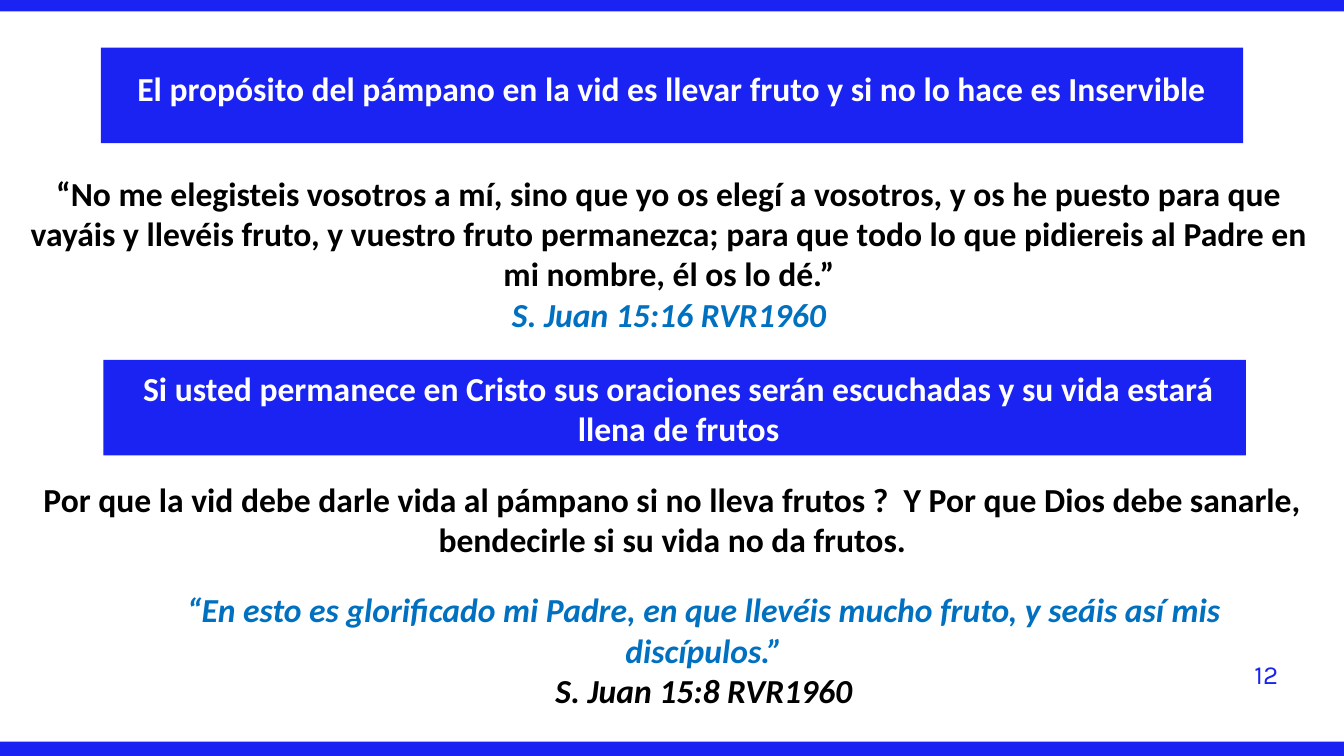
from dataclasses import dataclass

from pptx import Presentation
from pptx.dml.color import RGBColor
from pptx.enum.shapes import MSO_SHAPE
from pptx.enum.text import PP_ALIGN
from pptx.util import Cm, Pt

RECT = MSO_SHAPE.RECTANGLE
CENTER = PP_ALIGN.CENTER


@dataclass(frozen=True)
class Theme:
    blue: str = "1A23F1"
    sky: str = "0070C0"
    white: str = "FFFFFF"
    black: str = "000000"
    body: str = "Calibri"
    digit: str = "Karla"
    size: int = 36
    small: int = 28
    lead: float = 39.2


THEME = Theme()


def add_rect(shapes, box, color):
    rect = shapes.add_shape(RECT, *map(Cm, box))
    rect.shadow.inherit = False
    rect.fill.solid()
    rect.fill.fore_color.rgb = RGBColor.from_string(color)
    rect.line.fill.background()


def add_text(shapes, box, lines):
    frame = shapes.add_textbox(*map(Cm, box)).text_frame
    frame.word_wrap = True
    frame.text = "\n".join(text for text, _, _ in lines)
    for para, (_, color, slant) in zip(frame.paragraphs, lines):
        para.alignment = CENTER
        font = para.runs[0].font
        font.name = THEME.body
        font.size = Pt(THEME.size)
        font.bold = True
        font.italic = slant
        font.color.rgb = RGBColor.from_string(color)
    return frame


def add_banner(shapes, box, text, inset):
    left, top, width, height = box
    dx, dy, wide = inset
    add_rect(shapes, box, THEME.blue)
    add_text(shapes, (left + dx, top + dy, wide, height - 0.28),
             [(text, THEME.white, False)])


def add_badge(shapes, box, number):
    left, top, width, height = box
    group = shapes.add_group_shape().shapes
    add_rect(group, box, THEME.white)
    inner = (left + 0.76, top + 0.68, width - 1.52, height - 1.49)
    frame = add_text(group, inner, [(number, THEME.blue, False)])
    frame.margin_left = frame.margin_right = 0
    frame.margin_top = frame.margin_bottom = 0
    para = frame.paragraphs[0]
    para.line_spacing = Pt(THEME.lead)
    font = para.runs[0].font
    font.name = THEME.digit
    font.size = Pt(THEME.small)
    font.bold = False


def main():
    deck = Presentation()
    deck.slide_width = Cm(50.8)
    deck.slide_height = Cm(28.58)
    slide = deck.slides.add_slide(deck.slide_layouts[6])
    fill = slide.background.fill
    fill.solid()
    fill.fore_color.rgb = RGBColor.from_string(THEME.blue)
    shapes = slide.shapes

    add_rect(shapes, (0, 0.43, 50.8, 27.61), THEME.white)
    add_badge(shapes, (46.43, 24.03, 2.87, 2.79), "12")
    add_banner(
        shapes, (3.81, 1.8, 43.18, 3.61),
        "El propósito del pámpano en la vid es llevar fruto y si no lo hace "
        "es Inservible", (0.53, 0.64, 42.11))
    add_text(shapes, (0.84, 6.4, 48.9, 6.4), [
        ("“No me elegisteis vosotros a mí, sino que yo os elegí a vosotros, "
         "y os he puesto para que vayáis y llevéis fruto, y vuestro fruto "
         "permanezca; para que todo lo que pidiereis al Padre en mi nombre, "
         "él os lo dé.”", THEME.black, False),
        ("S. Juan 15:16 RVR1960", THEME.sky, True)])
    add_banner(
        shapes, (3.91, 13.61, 43.18, 3.61),
        "Si usted permanece en Cristo sus oraciones serán escuchadas y su "
        "vida estará llena de frutos", (0.43, 0.16, 42.62))
    add_text(shapes, (0.97, 17.98, 48.9, 3.33), [
        ("Por que la vid debe darle vida al pámpano si no lleva frutos ?  Y "
         "Por que Dios debe sanarle, bendecirle si su vida no da frutos.",
         THEME.black, False)])
    add_text(shapes, (4.45, 22.15, 44.32, 4.88), [
        ("“En esto es glorificado mi Padre, en que llevéis mucho fruto, y "
         "seáis así mis discípulos.”", THEME.sky, True),
        ("S. Juan 15:8 RVR1960", THEME.black, True)])
    deck.save("out.pptx")


if __name__ == "__main__":
    main()
